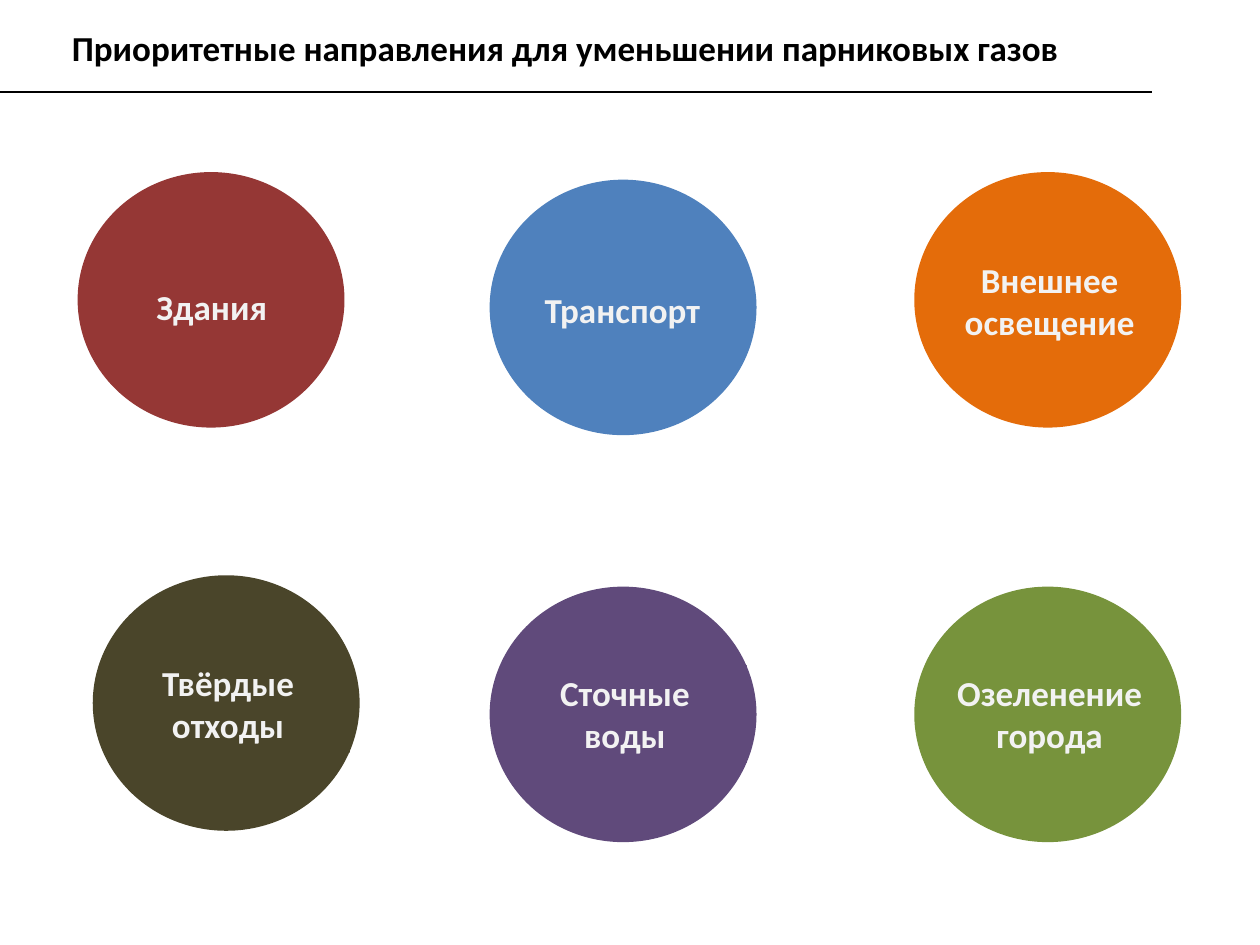
from pptx import Presentation
from pptx.dml.color import RGBColor
from pptx.enum.shapes import MSO_CONNECTOR, MSO_SHAPE
from pptx.enum.text import MSO_ANCHOR, MSO_AUTO_SIZE, PP_ALIGN
from pptx.oxml.ns import qn
from pptx.util import Inches, Pt

OVAL = MSO_SHAPE.OVAL
LINE = MSO_CONNECTOR.STRAIGHT
LEFT, MID = PP_ALIGN.LEFT, PP_ALIGN.CENTER
TOP = MSO_ANCHOR.TOP
FIXED = MSO_AUTO_SIZE.NONE

COLS = (0.63, 3.9, 7.27)
ROWS = (1.38, 4.67)
DISC_W, DISC_H = 2.09, 2
LABEL_W = 1.92

# text, fill, column, row, shift from the grid, label offset, label height
AREAS = [
    ("Здания", "953735", 0, 0, (0, 0), (0.09, 0.84), 0.44),
    ("Транспорт", "4F81BD", 1, 0, (0, 0.06), (0.08, 0.8), 0.44),
    ("Внешнее освещение", "E46C0A", 2, 0, (0, 0), (0.1, 0.62), 0.77),
    ("Твёрдые отходы", "4A452A", 0, 1, (0.12, -0.09), (0.1, 0.62), 0.77),
    ("Сточные воды", "604A7B", 1, 1, (0, 0), (0.1, 0.61), 0.77),
    ("Озеленение города", "77933C", 2, 1, (0, 0), (0.1, 0.61), 0.77),
]


def rgb(code):
    return RGBColor.from_string(code)


def box(*sides):
    return [Inches(side) for side in sides]


def paint(shape, color, width):
    shape.fill.solid()
    shape.fill.fore_color.rgb = rgb(color)
    shape.line.color.rgb = rgb(color)
    shape.line.width = Pt(width)


def write(shape, text, color, align):
    frame = shape.text_frame
    frame.text = text
    frame.word_wrap = True
    frame.auto_size = FIXED
    frame.vertical_anchor = TOP
    para = frame.paragraphs[0]
    para.alignment = align
    font = para.runs[0].font
    font.name, font.size, font.bold = "Calibri", Pt(20), True
    font.color.rgb = rgb(color)


def add_title(slide, text):
    title = slide.shapes.title
    title.left, title.top, title.width, title.height = box(0.47, 0.16, 8.95, 0.44)
    write(title, text, "000000", LEFT)


def add_rule(slide):
    rule = slide.shapes.add_connector(LINE, *box(0, 0.73, 9.14, 0.73))
    rule.line.color.rgb = rgb("000000")
    rule.line.width = Pt(1.25)
    props = rule._element.spPr
    props.append(props.makeelement(qn("a:effectLst"), {}))


def add_area(slide, text, color, col, row, shift, inset, height):
    x, y = COLS[col] + shift[0], ROWS[row] + shift[1]
    group = slide.shapes.add_group_shape()
    disc = group.shapes.add_shape(OVAL, *box(x, y, DISC_W, DISC_H))
    disc.shadow.inherit = False
    paint(disc, color, 2)
    label = group.shapes.add_textbox(
        *box(x + inset[0], y + inset[1], LABEL_W, height))
    paint(label, color, 0.75)
    write(label, text, "F2F2F2", MID)


def main():
    deck = Presentation()
    deck.slide_width, deck.slide_height = box(10, 7.5)
    slide = deck.slides.add_slide(deck.slide_layouts[5])

    # Areas of action
    for area in AREAS:
        add_area(slide, *area)

    # Heading
    add_rule(slide)
    add_title(slide, "Приоритетные направления для уменьшении парниковых газов")

    deck.save("out.pptx")


if __name__ == "__main__":
    main()
